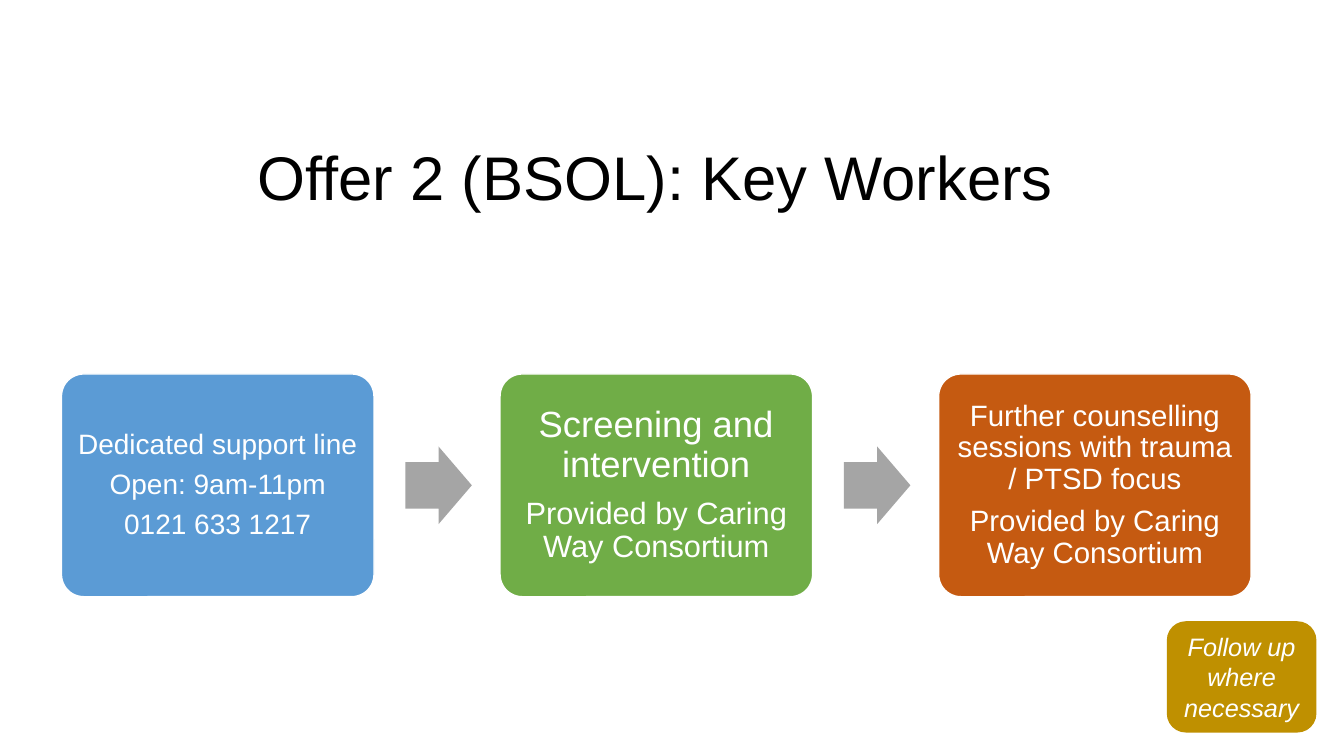
from pptx import Presentation
from pptx.dml.color import RGBColor
from pptx.enum.shapes import MSO_SHAPE
from pptx.enum.text import MSO_ANCHOR, PP_ALIGN
from pptx.util import Inches, Pt

ROUND = MSO_SHAPE.ROUNDED_RECTANGLE
ARROW = MSO_SHAPE.RIGHT_ARROW
MIDDLE = MSO_ANCHOR.MIDDLE
CENTER = PP_ALIGN.CENTER

FONT = "Arial"
COLORS = {
    "black": "000000",
    "white": "FFFFFF",
    "blue": "5B9BD5",
    "green": "70AD47",
    "orange": "C55A11",
    "gold": "BF9000",
    "gray": "A5A5A5",
}

# Process row: left edge, distance between steps, top and size of a step
LEFT, PITCH, TOP = 0.61, 4.35, 3.71
WIDTH, HEIGHT = 3.1, 2.21
ARROW_GAP, ARROW_W, ARROW_H = 0.31, 0.66, 0.77

PROVIDER = "Provided by Caring Way Consortium"
# Fill, inset, lines of (text, size)
STEPS = [
    ("blue", 0.07, [("Dedicated support line", 20),
                    ("Open: 9am-11pm", 20),
                    ("0121 633 1217", 20)]),
    ("green", 0.11, [("Screening and intervention", 26), (PROVIDER, 22)]),
    ("orange", 0.09, [("Further counselling sessions with trauma / PTSD focus", 21),
                      (PROVIDER, 21)]),
]


def rgb(name):
    return RGBColor.from_string(COLORS[name])


def style(par, size, color, spacing=None):
    par.alignment = CENTER
    par.line_spacing = spacing
    par.font.name = FONT
    par.font.size = Pt(size)
    par.font.color.rgb = rgb(color)


def add_title(slide, text):
    title = slide.shapes.title
    title.left, title.top = Inches(0.84), Inches(1.07)
    title.width, title.height = Inches(11.5), Inches(1.45)
    frame = title.text_frame
    frame.text = text
    frame.vertical_anchor = MIDDLE
    style(frame.paragraphs[0], 44, "black", 0.9)


def add_block(slide, kind, box, fill, line=None):
    shape = slide.shapes.add_shape(kind, *map(Inches, box))
    shape.shadow.inherit = False
    shape.fill.solid()
    shape.fill.fore_color.rgb = rgb(fill)
    if line:
        shape.line.color.rgb = rgb(line)
        shape.line.width = Pt(1)
    else:
        shape.line.fill.background()
    return shape


def add_step(slide, left, fill, inset, lines):
    step = add_block(slide, ROUND, (left, TOP, WIDTH, HEIGHT), fill, "white")
    step.adjustments[0] = 0.1
    frame = step.text_frame
    frame.word_wrap = True
    frame.vertical_anchor = MIDDLE
    frame.margin_left = frame.margin_right = Inches(inset)
    frame.margin_top = frame.margin_bottom = Inches(inset)
    frame.text = "\n".join(text for text, _ in lines)
    for par, (_, size) in zip(frame.paragraphs, lines):
        style(par, size, "white", 0.9)
        par.space_after = Pt(0.35 * size)


def add_arrow(slide, left):
    top = TOP + (HEIGHT - ARROW_H) / 2
    arrow = add_block(slide, ARROW, (left, top, ARROW_W, ARROW_H), "gray")
    arrow.adjustments[0] = 0.6
    arrow.adjustments[1] = 0.5


def add_note(slide, text):
    note = add_block(slide, ROUND, (11.58, 6.17, 1.47, 1.09), "gold", "gold")
    frame = note.text_frame
    frame.word_wrap = True
    frame.vertical_anchor = MIDDLE
    frame.text = text
    par = frame.paragraphs[0]
    style(par, 18, "white")
    par.font.italic = True


def main():
    deck = Presentation()
    deck.slide_width, deck.slide_height = Inches(13.33), Inches(7.5)
    slide = deck.slides.add_slide(deck.slide_layouts[5])

    # The trailing space sets the title slightly left of center
    add_title(slide, "Offer 2 (BSOL): Key Workers ")

    # Steps, with an arrow before each one but the first
    for i, (fill, inset, lines) in enumerate(STEPS):
        left = LEFT + i * PITCH
        if i:
            add_arrow(slide, left - PITCH + WIDTH + ARROW_GAP)
        add_step(slide, left, fill, inset, lines)

    # Follow-up note
    add_note(slide, "Follow up where necessary")
    deck.save("out.pptx")


if __name__ == "__main__":
    main()
